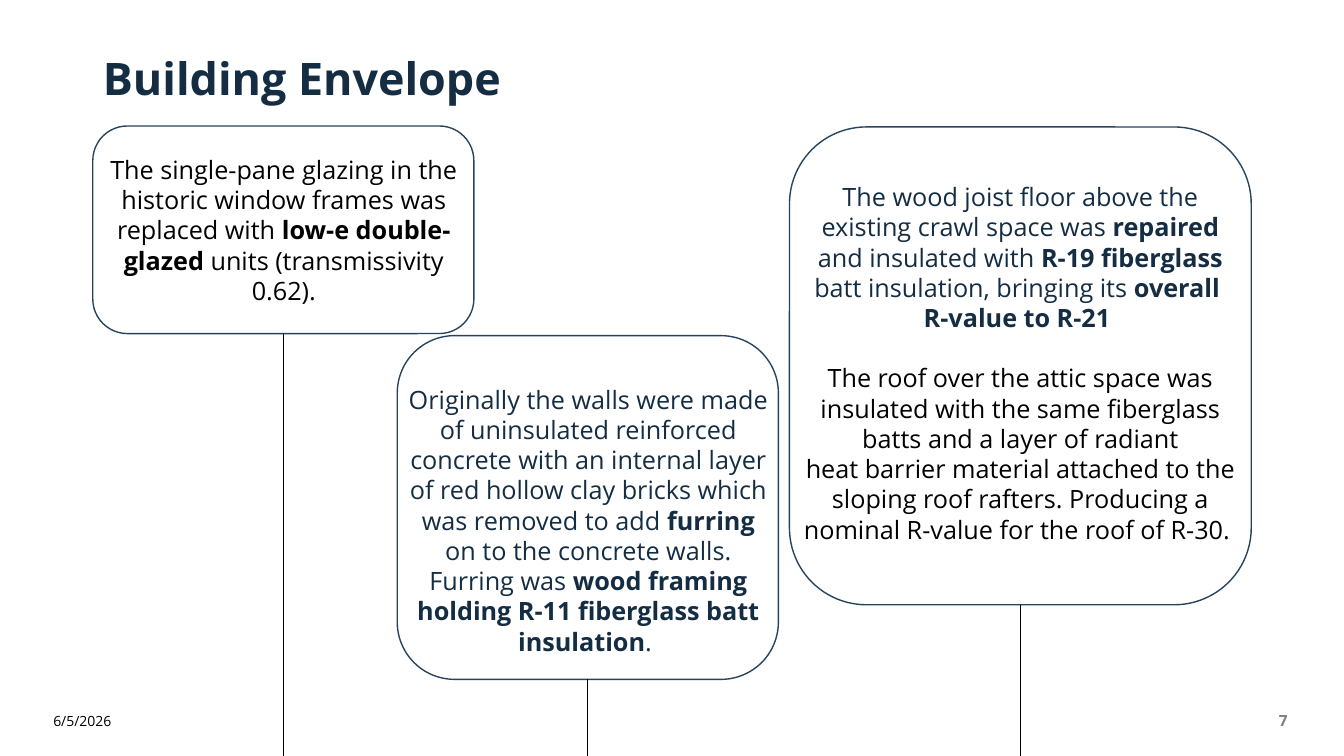
import pptx
import pptx.dml.color
import pptx.enum.shapes
import pptx.enum.text
import pptx.util
from lxml import etree
from pptx.oxml.ns import qn

EMU_PER_PX = 9144
SLIDE_WIDTH, SLIDE_HEIGHT = 1333, 750
NAVY, OUTLINE, BLACK, GREY = "142D43", "28445D", "000000", "808080"
ALIGN = pptx.enum.text.PP_ALIGN
ANCHOR = pptx.enum.text.MSO_ANCHOR
AUTO_SIZE = pptx.enum.text.MSO_AUTO_SIZE

WALLS = [
    [("Originally the walls were made of uninsulated reinforced concrete with an "
      "internal layer of red hollow clay bricks which was removed to add ", False),
     ("furring", True),
     (" on to the concrete walls. Furring was ", False),
     ("wood framing holding R-11 fiberglass batt insulation", True),
     (". ", False)],
]
FLOOR = [
    [("The wood joist floor above the existing crawl space was ", False),
     ("repaired", True),
     (" and insulated with ", False),
     ("R-19 fiberglass ", True),
     ("batt insulation, bringing its ", False),
     ("overall ", True)],
    [("R-value to R-21 ", True)],
]
ROOF = [
    [("The roof over the attic space was insulated with the same fiberglass "
      "batts and a layer of radiant", False)],
    [("heat barrier material attached to the sloping roof rafters. Producing a "
      "nominal R-value for the roof of R-30. ", False)],
]
GLAZING = [
    [("The single-pane glazing in the historic window frames was replaced with", False),
     (" low-e double-glazed", True),
     (" units (transmissivity 0.62).", False)],
]


def px(length):
    """Turn pixels into EMU."""
    return pptx.util.Emu(length * EMU_PER_PX)


def rgb(value):
    """Turn a hex string into a colour."""
    return pptx.dml.color.RGBColor.from_string(value)


def write(paragraph, runs, size=18, color=BLACK, align=ALIGN.CENTER):
    """Fill a paragraph with (text, bold) runs in one format."""
    paragraph.alignment = align
    for text, bold in runs:
        run = paragraph.add_run()
        run.text = text
        run.font.name = "Open Sans"
        run.font.size = pptx.util.Pt(size)
        run.font.bold = bold
        run.font.color.rgb = rgb(color)


def add_text_frame(slide, left, top, width, height, anchor=ANCHOR.TOP, fit=AUTO_SIZE.NONE):
    """Add a wrapping text box and return its text frame."""
    frame = slide.shapes.add_textbox(px(left), px(top), px(width), px(height)).text_frame
    frame.word_wrap = True
    frame.vertical_anchor = anchor
    frame.auto_size = fit
    return frame


def add_title(slide, text):
    """Place and format the slide title."""
    title = slide.shapes.title
    title.left, title.top, title.width, title.height = map(px, (92, 40, 1150, 80))
    frame = title.text_frame
    frame.vertical_anchor = ANCHOR.MIDDLE
    frame.auto_size = AUTO_SIZE.NONE
    heading = frame.paragraphs[0]
    heading.line_spacing = 0.9
    write(heading, [(text, True)], size=32, color=NAVY, align=ALIGN.LEFT)


def add_callout(slide, left, top, width, height, stem_weight=0.5):
    """Add a rounded outline with a stem down to the slide's lower edge."""
    outline = slide.shapes.add_shape(
        pptx.enum.shapes.MSO_SHAPE.ROUNDED_RECTANGLE,
        px(left), px(top), px(width), px(height))
    outline.shadow.inherit = False
    outline.fill.background()
    outline.line.color.rgb = rgb(OUTLINE)
    outline.line.width = pptx.util.Pt(1)
    center = px(left + width // 2)
    stem = slide.shapes.add_connector(
        pptx.enum.shapes.MSO_CONNECTOR.STRAIGHT,
        center, px(top + height), center, px(SLIDE_HEIGHT))
    stem.begin_connect(outline, 2)
    stem.line.color.rgb = rgb(BLACK)
    stem.line.width = pptx.util.Pt(stem_weight)
    etree.SubElement(stem._element.spPr, qn("a:effectLst"))


def add_story(slide, left, top, width, height, *sections):
    """Add centred text whose (paragraphs, colour) sections stand a line apart."""
    frame = add_text_frame(slide, left, top, width, height, fit=AUTO_SIZE.SHAPE_TO_FIT_TEXT)
    paragraph = frame.paragraphs[0]
    for section, (paragraphs, color) in enumerate(sections):
        for index, runs in enumerate(paragraphs):
            if section or index:
                paragraph = frame.add_paragraph()
            if section and index == 0:
                paragraph.space_before = pptx.util.Pt(21.6)
            write(paragraph, runs, color=color)


def main():
    """Build and save the slide."""
    deck = pptx.Presentation()
    deck.slide_width, deck.slide_height = px(SLIDE_WIDTH), px(SLIDE_HEIGHT)
    slide = deck.slides.add_slide(deck.slide_layouts[5])
    add_title(slide, "Building Envelope")

    page_number = add_text_frame(slide, 1212, 695, 75, 40, anchor=ANCHOR.MIDDLE)
    write(page_number.paragraphs[0], [("7", True)], size=11, color=GREY, align=ALIGN.RIGHT)

    add_callout(slide, 394, 333, 378, 341)
    add_story(slide, 394, 376, 379, 252, (WALLS, NAVY))
    add_callout(slide, 783, 126, 458, 474)
    add_story(slide, 783, 175, 458, 374, (FLOOR, NAVY), (ROOF, BLACK))
    add_callout(slide, 92, 125, 378, 206, stem_weight=1)
    add_story(slide, 92, 148, 379, 162, (GLAZING, BLACK))

    date = add_text_frame(slide, 43, 695, 102, 40, anchor=ANCHOR.MIDDLE)
    write(date.paragraphs[0], [("6/5/2026", False)], size=10, align=ALIGN.LEFT)

    deck.save("out.pptx")


if __name__ == "__main__":
    main()
